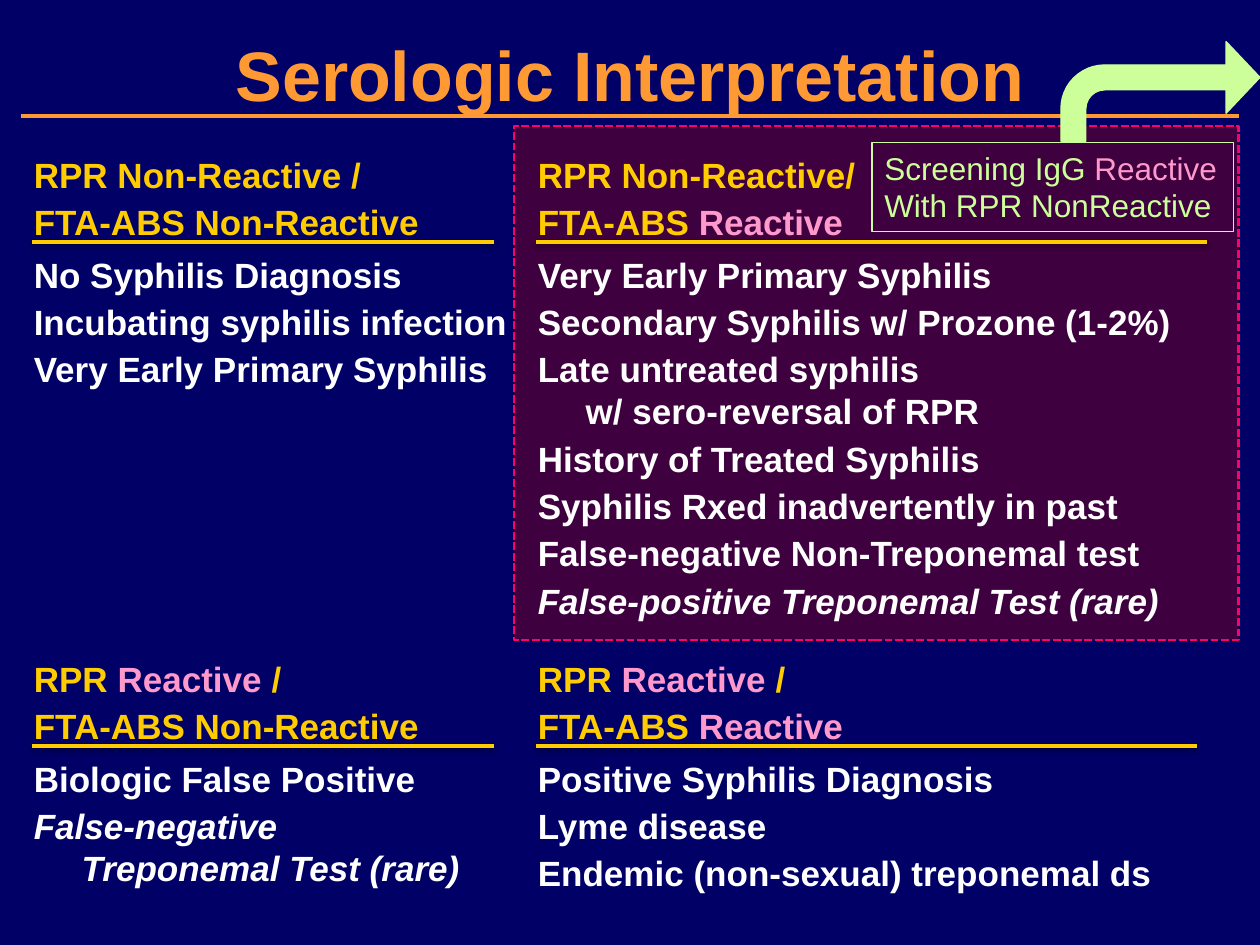
from lxml import etree
from pptx import Presentation
from pptx.dml.color import RGBColor
from pptx.enum.dml import MSO_LINE
from pptx.enum.shapes import MSO_CONNECTOR, MSO_SHAPE
from pptx.enum.text import MSO_ANCHOR, PP_ALIGN
from pptx.oxml.ns import qn
from pptx.util import Inches, Pt

RECTANGLE = MSO_SHAPE.RECTANGLE
BENT_ARROW = MSO_SHAPE.BENT_ARROW
STRAIGHT = MSO_CONNECTOR.STRAIGHT
SHORT_DASH = MSO_LINE.SQUARE_DOT
TOP, MIDDLE = MSO_ANCHOR.TOP, MSO_ANCHOR.MIDDLE
LEFT, CENTER = PP_ALIGN.LEFT, PP_ALIGN.CENTER

NAVY, PLUM, MAGENTA = "000066", "3E003E", "FF0066"
ORANGE, GOLD, PINK = "FF9933", "FFCC00", "FF99CC"
LIME, WHITE = "CCFF99", "FFFFFF"


def rgb(color):
    return RGBColor.from_string(color)


def write(paragraph, text, *, size=20, color=WHITE, bold=True, italic=False):
    for number, line in enumerate(text.split("\n")):
        if number:
            paragraph.add_line_break()
        run = paragraph.add_run()
        run.text = line
        font = run.font
        font.name, font.size = "Arial", Pt(size)
        font.bold, font.italic = bold, italic
        font.color.rgb = rgb(color)


class SlideBuilder:
    hanging_indent = Inches(0.38)

    def __init__(self, slide, background):
        self.slide = slide
        slide.background.fill.solid()
        slide.background.fill.fore_color.rgb = rgb(background)

    def shape(self, kind, box, *, fill=None, line, width=0.75, dash=None):
        shape = self.slide.shapes.add_shape(kind, *map(Inches, box))
        shape.shadow.inherit = False
        if fill:
            shape.fill.solid()
            shape.fill.fore_color.rgb = rgb(fill)
        else:
            shape.fill.background()
        shape.line.color.rgb = rgb(line)
        shape.line.width = Pt(width)
        if dash:
            shape.line.dash_style = dash
        return shape

    def text_box(self, box):
        return self.slide.shapes.add_textbox(*map(Inches, box)).text_frame

    def fill_text(self, frame, lines, *, align=LEFT, anchor=TOP, wrap=True, **style):
        frame.word_wrap = wrap
        frame.vertical_anchor = anchor
        for number, runs in enumerate(lines):
            paragraph = frame.add_paragraph() if number else frame.paragraphs[0]
            paragraph.alignment = align
            for text, color in runs:
                write(paragraph, text, color=color, **style)

    def rule(self, left, right, y, color, width, shadow=False):
        ends = map(Inches, (left, y, right, y))
        line = self.slide.shapes.add_connector(STRAIGHT, *ends)
        line.line.color.rgb = rgb(color)
        line.line.width = Pt(width)
        effects = etree.SubElement(line._element.spPr, qn("a:effectLst"))
        if shadow:
            outer = etree.SubElement(
                effects, qn("a:outerShdw"), blurRad=str(Pt(3.1)),
                dist=str(Pt(1.6)), dir="5400000", rotWithShape="0")
            black = etree.SubElement(outer, qn("a:srgbClr"), val="000000")
            etree.SubElement(black, qn("a:alpha"), val="38000")

    def result_group(self, box, heading, findings, rare=None):
        frame = self.text_box(box)
        self.fill_text(frame, heading + [[(text, WHITE)] for text in findings])
        if rare:
            write(frame.add_paragraph(), rare, italic=True)
        for number, paragraph in enumerate(frame.paragraphs):
            paragraph.space_after = Pt(6 if number == 1 else 3)
            properties = paragraph._p.get_or_add_pPr()
            properties.set("marL", str(self.hanging_indent))
            properties.set("indent", str(-self.hanging_indent))


def main():
    deck = Presentation()
    deck.slide_width, deck.slide_height = Inches(10), Inches(7.5)
    builder = SlideBuilder(deck.slides.add_slide(deck.slide_layouts[6]), NAVY)

    builder.shape(RECTANGLE, (4.08, 1, 5.75, 4.08), fill=PLUM,
                  line=MAGENTA, width=1.5, dash=SHORT_DASH)
    builder.fill_text(builder.text_box((0.75, 0.17, 8.5, 0.83)),
                      [[("Serologic Interpretation", ORANGE)]],
                      align=CENTER, anchor=MIDDLE, size=40)

    rpr_reactive = [("RPR ", GOLD), ("Reactive", PINK), (" /", GOLD)]
    fta_reactive = [("FTA-ABS ", GOLD), ("Reactive", PINK)]
    fta_nonreactive = [("FTA-ABS Non-Reactive", GOLD)]

    builder.result_group(
        (0.17, 1.17, 4.5, 2.2),
        [[("RPR Non-Reactive /", GOLD)], fta_nonreactive],
        ["No Syphilis Diagnosis", "Incubating syphilis infection",
         "Very Early Primary Syphilis"])
    builder.result_group(
        (0.17, 5.17, 4.5, 2.2),
        [rpr_reactive, fta_nonreactive],
        ["Biologic False Positive"],
        rare="False-negative\nTreponemal Test (rare)")
    builder.result_group(
        (4.17, 1.17, 5.42, 3.9),
        [[("RPR Non-Reactive/", GOLD)], fta_reactive],
        ["Very Early Primary Syphilis", "Secondary Syphilis w/ Prozone (1-2%)",
         "Late untreated syphilis\nw/ sero-reversal of RPR",
         "History of Treated Syphilis", "Syphilis Rxed inadvertently in past",
         "False-negative Non-Treponemal test"],
        rare="False-positive Treponemal Test (rare)")
    builder.result_group(
        (4.17, 5.17, 5.42, 2.2),
        [rpr_reactive, fta_reactive],
        ["Positive Syphilis Diagnosis", "Lyme disease",
         "Endemic (non-sexual) treponemal ds"])

    builder.rule(0.17, 9.83, 0.92, ORANGE, 2.25)
    screening = builder.shape(RECTANGLE, (6.92, 1.13, 2.87, 0.71), line=LIME)
    builder.fill_text(screening.text_frame,
                      [[("Screening IgG ", LIME), ("Reactive", PINK)],
                       [("With RPR NonReactive", LIME)]],
                      wrap=False, size=18, bold=False)
    for left, right, y in ((0.25, 3.92, 1.92), (0.25, 3.92, 5.92),
                           (4.25, 9.58, 1.92), (4.25, 9.5, 5.92)):
        builder.rule(left, right, y, GOLD, 2, shadow=True)

    arrow = builder.shape(BENT_ARROW, (8.42, 0.33, 1.58, 0.79), fill=LIME, line=LIME)
    for number, value in enumerate((0.25, 0.36, 0.34, 0.44)):
        arrow.adjustments[number] = value

    deck.save("out.pptx")


if __name__ == "__main__":
    main()
